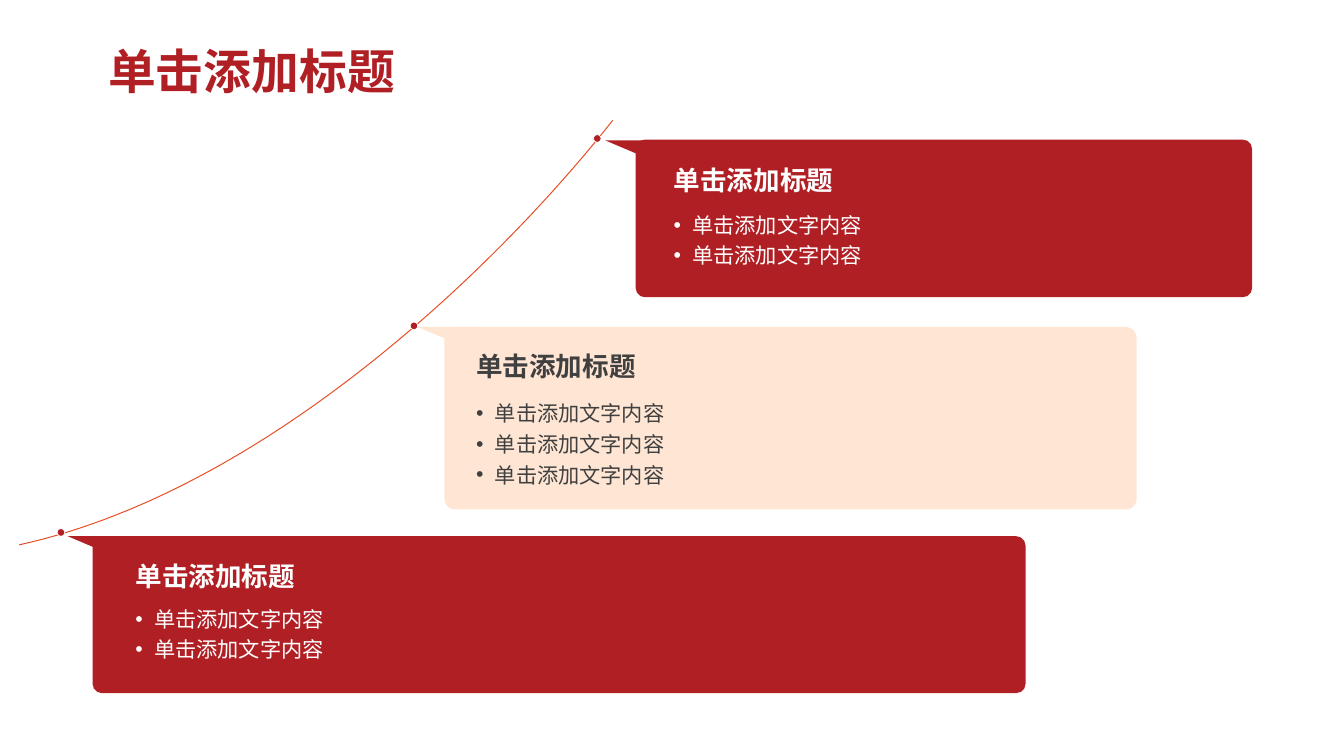
import pptx
import pptx.util
import pptx.dml.color
import pptx.enum.shapes
import pptx.enum.text
import pptx.oxml
import pptx.oxml.ns
from dataclasses import dataclass
from pptx.util import Cm, Pt

TITLE = "单击添加标题"
POINT = "单击添加文字内容"

# Lengths in cm: panel is left, top, width, height; the rest are left, top.
CARDS = [
    {"heading": "单击添加标题", "points": [POINT] * 2, "style": "strong",
     "panel": (2.46, 14.25, 24.79, 4.17), "heading_at": (3.35, 14.76),
     "body_at": (3.35, 15.85), "pointer_at": (1.8, 14.25), "dot_at": (1.52, 14.05)},
    {"heading": "单击添加标题", "points": [POINT] * 3, "style": "soft",
     "panel": (11.81, 8.69, 18.39, 4.85), "heading_at": (12.4, 9.17),
     "body_at": (12.4, 10.39), "pointer_at": (11.1, 8.69), "dot_at": (10.9, 8.56)},
    {"heading": "单击添加标题", "points": [POINT] * 2, "style": "strong",
     "panel": (16.89, 3.71, 16.38, 4.19), "heading_at": (17.65, 4.24),
     "body_at": (17.65, 5.38), "pointer_at": (16.08, 3.73), "dot_at": (15.77, 3.58)},
]
CURVE = [(0.51, 14.48), (6.99, 13.06), (13.13, 7.19), (16.28, 3.2)]
CURVE_STEPS = 60
POINTER = (1.6, 0.68)
DOT = 0.2


@dataclass(frozen=True)
class Theme:
    font: str = "Noto Sans CJK SC"
    red: str = "B01F24"
    peach: str = "FFE6D4"
    orange: str = "E84C22"
    grey: str = "404040"
    white: str = "FFFFFF"
    title_size: int = 36
    heading_size: int = 20
    body_size: int = 16


THEME = Theme()
STYLES = {"strong": (THEME.red, THEME.white), "soft": (THEME.peach, THEME.grey)}
SHAPE = pptx.enum.shapes.MSO_SHAPE


def rgb(code):
    return pptx.dml.color.RGBColor.from_string(code)


def paint(shape, fill=None, line=None, width=0):
    shape.shadow.inherit = False
    if fill:
        shape.fill.solid()
        shape.fill.fore_color.rgb = rgb(fill)
    else:
        shape.fill.background()
    if line:
        shape.line.color.rgb = rgb(line)
        shape.line.width = Pt(width)
    else:
        shape.line.fill.background()


def add_run(para, text, size, color, bold=False):
    run = para.add_run()
    run.text = text
    run.font.size = Pt(size)
    run.font.bold = bold
    run.font.color.rgb = rgb(color)
    run.font.name = THEME.font
    east_asian = pptx.oxml.parse_xml(
        f'<a:ea {pptx.oxml.ns.nsdecls("a")} typeface="{THEME.font}"/>')
    run.font._element.find(pptx.oxml.ns.qn("a:latin")).addnext(east_asian)


def add_bullet(para):
    properties = para._p.get_or_add_pPr()
    properties.set("marL", str(Cm(0.5)))
    properties.set("indent", str(-Cm(0.5)))
    properties.append(pptx.oxml.parse_xml(
        f'<a:buFont {pptx.oxml.ns.nsdecls("a")} typeface="Arial"/>'))
    properties.append(pptx.oxml.parse_xml(
        f'<a:buChar {pptx.oxml.ns.nsdecls("a")} char="•"/>'))


def add_text(page, left, top, width, height):
    frame = page.shapes.add_textbox(Cm(left), Cm(top), Cm(width), Cm(height)).text_frame
    frame.word_wrap = True
    return frame


def add_outline(page, points, close):
    start, *rest = [(Cm(x), Cm(y)) for x, y in points]
    builder = page.shapes.build_freeform(*start)
    builder.add_line_segments(rest, close=close)
    return builder.convert_to_shape()


def add_title(page):
    title = page.shapes.title
    title.left, title.top, title.width, title.height = Cm(2.87), Cm(1.09), Cm(8.79), Cm(1.55)
    frame = title.text_frame
    frame.margin_left = frame.margin_right = frame.margin_top = frame.margin_bottom = 0
    frame.auto_size = pptx.enum.text.MSO_AUTO_SIZE.NONE
    frame.vertical_anchor = pptx.enum.text.MSO_ANCHOR.MIDDLE
    para = frame.paragraphs[0]
    para.alignment = pptx.enum.text.PP_ALIGN.LEFT
    add_run(para, TITLE, THEME.title_size, THEME.red, bold=True)


def curve_points():
    """Sample the cubic Bézier curve through its four control points."""
    for step in range(CURVE_STEPS + 1):
        t = step / CURVE_STEPS
        weights = ((1 - t) ** 3, 3 * t * (1 - t) ** 2, 3 * t ** 2 * (1 - t), t ** 3)
        yield tuple(sum(w * point[axis] for w, point in zip(weights, CURVE))
                    for axis in (0, 1))


def add_card(page, card):
    fill, ink = STYLES[card["style"]]
    left, top, width, height = card["panel"]
    panel = page.shapes.add_shape(SHAPE.ROUNDED_RECTANGLE, Cm(left), Cm(top),
                                  Cm(width), Cm(height))
    panel.adjustments[0] = 0.059
    paint(panel, fill)

    x, y = card["pointer_at"]
    across, down = POINTER
    paint(add_outline(page, [(x, y), (x + across, y), (x + across, y + down)], True), fill)

    heading = add_text(page, *card["heading_at"], 5.08, 1.12)
    add_run(heading.paragraphs[0], card["heading"], THEME.heading_size, ink, bold=True)

    body_left, body_top = card["body_at"]
    body = add_text(page, body_left, body_top, left + width - body_left - 0.6,
                    0.85 * len(card["points"]) + 0.1)
    for index, point in enumerate(card["points"]):
        para = body.add_paragraph() if index else body.paragraphs[0]
        add_bullet(para)
        para.line_spacing = 1.2
        add_run(para, point, THEME.body_size, ink)


def add_dot(page, left, top):
    dot = page.shapes.add_shape(SHAPE.OVAL, Cm(left), Cm(top), Cm(DOT), Cm(DOT))
    paint(dot, THEME.red, THEME.white, 0.5)


def main():
    deck = pptx.Presentation()
    deck.slide_width, deck.slide_height = Cm(35.71), Cm(20.09)
    page = deck.slides.add_slide(deck.slide_layouts[5])
    add_title(page)
    for card in CARDS:
        add_card(page, card)
    paint(add_outline(page, curve_points(), False), line=THEME.orange, width=0.75)
    for card in CARDS:
        add_dot(page, *card["dot_at"])
    deck.save("out.pptx")


if __name__ == "__main__":
    main()
